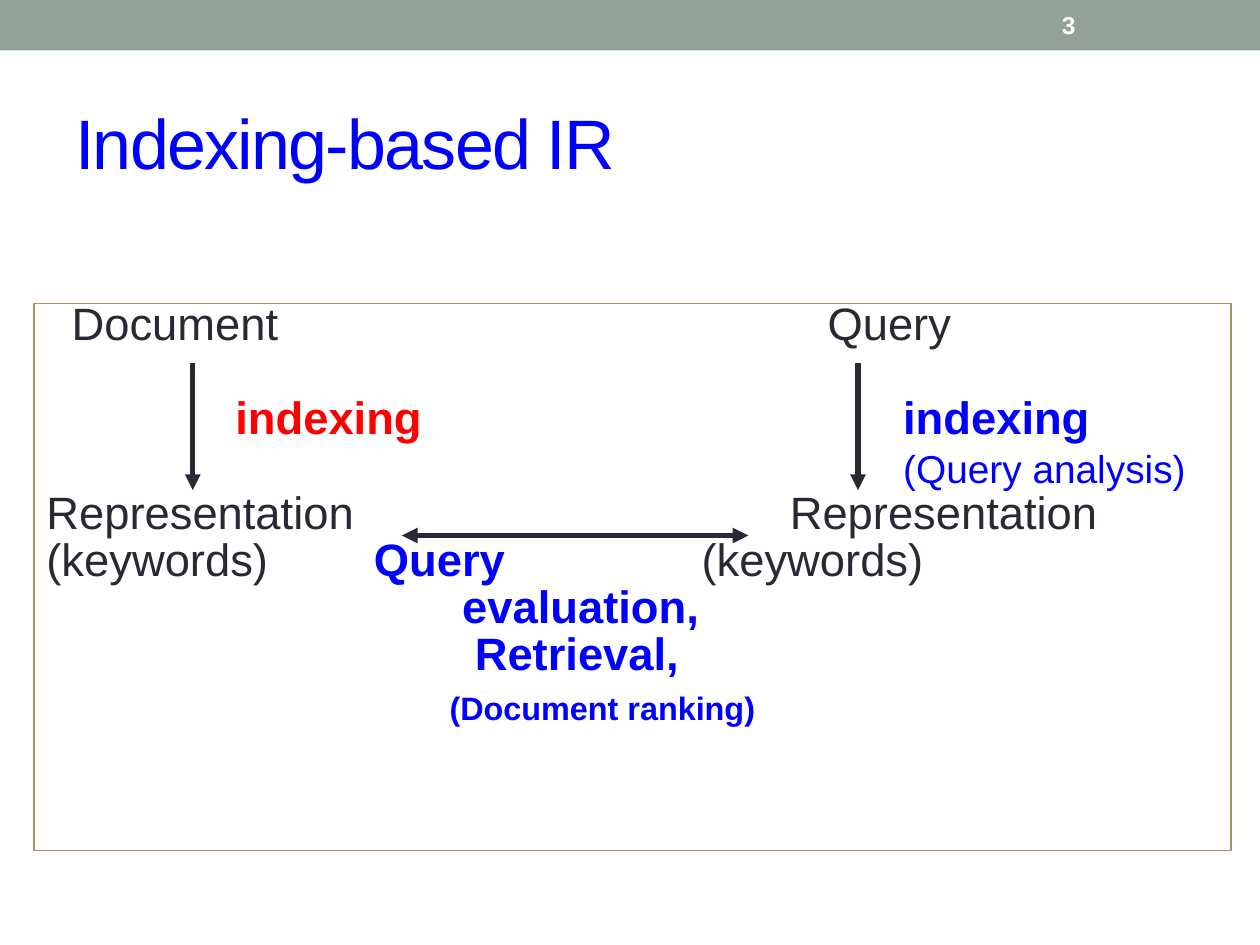
from dataclasses import dataclass

import pptx
import pptx.dml.color
import pptx.enum.shapes
import pptx.enum.text
import pptx.oxml
import pptx.oxml.ns
import pptx.util

WIDTH, HEIGHT = 10, 7.5
Inches, Pt = pptx.util.Inches, pptx.util.Pt
ANCHOR = pptx.enum.text.MSO_ANCHOR


@dataclass(frozen=True)
class Theme:
    font: str = "Arial"
    ink: str = "292934"
    blue: str = "0000FF"
    red: str = "FF0000"
    white: str = "FFFFFF"
    band: str = "93A299"
    frame: str = "AD8F67"
    title_size: float = 40
    body_size: float = 25.9
    analysis_size: float = 22.2
    ranking_size: float = 18.5
    number_size: float = 14
    line_height: float = 21
    line_gap: float = 6


THEME = Theme()


@dataclass(frozen=True)
class Box:
    """A rectangle given in shares of the slide's width and height."""
    left: float
    top: float
    width: float
    height: float

    def lengths(self) -> list:
        return [Inches(self.left * WIDTH), Inches(self.top * HEIGHT),
                Inches(self.width * WIDTH), Inches(self.height * HEIGHT)]


@dataclass(frozen=True)
class Label:
    """Text starting at a tab stop, in inches from the text edge (0 for none)."""
    text: str
    stop: float = 0
    color: str = THEME.ink
    bold: bool = False
    size: float = THEME.body_size


@dataclass(frozen=True)
class Row:
    labels: tuple
    skipped_rows: int = 0


@dataclass(frozen=True)
class Arrow:
    """Ends in shares of the slide's width and height."""
    start: tuple
    end: tuple
    double: bool = False


BAND = Box(0, 0, 1, 0.4 / HEIGHT)
NUMBER = Box(0.833, 0.02 / HEIGHT, 0.117, 0.36 / HEIGHT)
TITLE = Box(0.05, 0.58 / HEIGHT, 0.9, 1.08 / HEIGHT)
BODY = Box(0.027, 2.41 / HEIGHT, 0.95, 4.34 / HEIGHT)

ROWS = (
    Row((Label("Document", 0.2), Label("Query", 6.2))),
    Row((Label("indexing", 1.5, THEME.red, True),
         Label("indexing", 6.8, THEME.blue, True)), skipped_rows=1),
    Row((Label("(Query analysis)", 6.8, THEME.blue, size=THEME.analysis_size),)),
    Row((Label("Representation"), Label("Representation", 5.9))),
    Row((Label("(keywords)"), Label("Query", 2.6, THEME.blue, True),
         Label("(keywords)", 5.2))),
    Row((Label("evaluation,", 3.3, THEME.blue, True),)),
    Row((Label("Retrieval,", 3.4, THEME.blue, True),)),
    Row((Label("(Document ranking)", 3.2, THEME.blue, True, THEME.ranking_size),)),
)

ARROWS = (
    Arrow((0.153, 2.88 / HEIGHT), (0.153, 3.89 / HEIGHT)),
    Arrow((0.681, 2.88 / HEIGHT), (0.681, 3.89 / HEIGHT)),
    Arrow((0.319, 4.25 / HEIGHT), (0.594, 4.25 / HEIGHT), double=True),
)


def rgb(color: str):
    return pptx.dml.color.RGBColor.from_string(color)


def set_all(target, values: dict) -> None:
    for name, value in values.items():
        setattr(target, name, value)


def add_run(paragraph, label: Label):
    run = paragraph.add_run()
    run.text = ("\t" if label.stop else "") + label.text
    set_all(run.font, {"name": THEME.font, "size": Pt(label.size), "bold": label.bold})
    run.font.color.rgb = rgb(label.color)
    return run


def add_text_box(slide, box: Box, anchor):
    shape = slide.shapes.add_textbox(*box.lengths())
    set_all(shape.text_frame, {"word_wrap": True, "vertical_anchor": anchor})
    return shape


def add_tab_stops(paragraph, labels: tuple) -> None:
    properties = paragraph._p.get_or_add_pPr()
    tabs = pptx.oxml.ns.qn("a:tabLst")
    tab_list = properties.makeelement(tabs, {})
    properties.append(tab_list)
    for label in labels:
        if label.stop:
            tab = tab_list.makeelement(pptx.oxml.ns.qn("a:tab"),
                                       {"pos": str(Inches(label.stop)), "algn": "l"})
            tab_list.append(tab)


def add_body(slide) -> None:
    shape = add_text_box(slide, BODY, ANCHOR.TOP)
    shape.line.color.rgb = rgb(THEME.frame)
    shape.line.width = Pt(0.75)
    frame = shape.text_frame
    frame.margin_top = Inches(0.07)
    for index, row in enumerate(ROWS):
        paragraph = frame.add_paragraph() if index else frame.paragraphs[0]
        add_tab_stops(paragraph, row.labels)
        pitch = THEME.line_height + THEME.line_gap
        gap = THEME.line_gap + row.skipped_rows * pitch if index else 0
        set_all(paragraph, {"line_spacing": Pt(THEME.line_height), "space_before": Pt(gap)})
        for label in row.labels:
            add_run(paragraph, label)


def add_arrow(slide, arrow: Arrow) -> None:
    ends = [Inches(share * length) for point in (arrow.start, arrow.end)
            for share, length in zip(point, (WIDTH, HEIGHT))]
    connector = slide.shapes.add_connector(
        pptx.enum.shapes.MSO_CONNECTOR.STRAIGHT, *ends)
    connector.line.color.rgb = rgb(THEME.ink)
    connector.line.width = Pt(3)
    line = connector.line._get_or_add_ln()
    for name in ("a:headEnd", "a:tailEnd") if arrow.double else ("a:tailEnd",):
        line.append(line.makeelement(pptx.oxml.ns.qn(name), {"type": "triangle"}))
    properties = connector._element.spPr
    properties.append(properties.makeelement(pptx.oxml.ns.qn("a:effectLst"), {}))


def add_header(slide) -> None:
    band = slide.shapes.add_shape(
        pptx.enum.shapes.MSO_SHAPE.RECTANGLE, *BAND.lengths())
    band.shadow.inherit = False
    band.fill.solid()
    band.fill.fore_color.rgb = rgb(THEME.band)
    band.line.fill.background()

    number = add_text_box(slide, NUMBER, ANCHOR.MIDDLE)
    add_run(number.text_frame.paragraphs[0],
            Label("3", color=THEME.white, bold=True, size=THEME.number_size))

    title = add_text_box(slide, TITLE, ANCHOR.MIDDLE)
    run = add_run(title.text_frame.paragraphs[0],
                  Label("Indexing-based IR", color=THEME.blue, size=THEME.title_size))
    run._r.get_or_add_rPr().set("spc", "-100")


def main() -> None:
    presentation = pptx.Presentation()
    set_all(presentation, {"slide_width": Inches(WIDTH), "slide_height": Inches(HEIGHT)})
    slide = presentation.slides.add_slide(presentation.slide_layouts[6])
    add_header(slide)
    add_body(slide)
    for arrow in ARROWS:
        add_arrow(slide, arrow)
    presentation.save("out.pptx")


if __name__ == "__main__":
    main()
